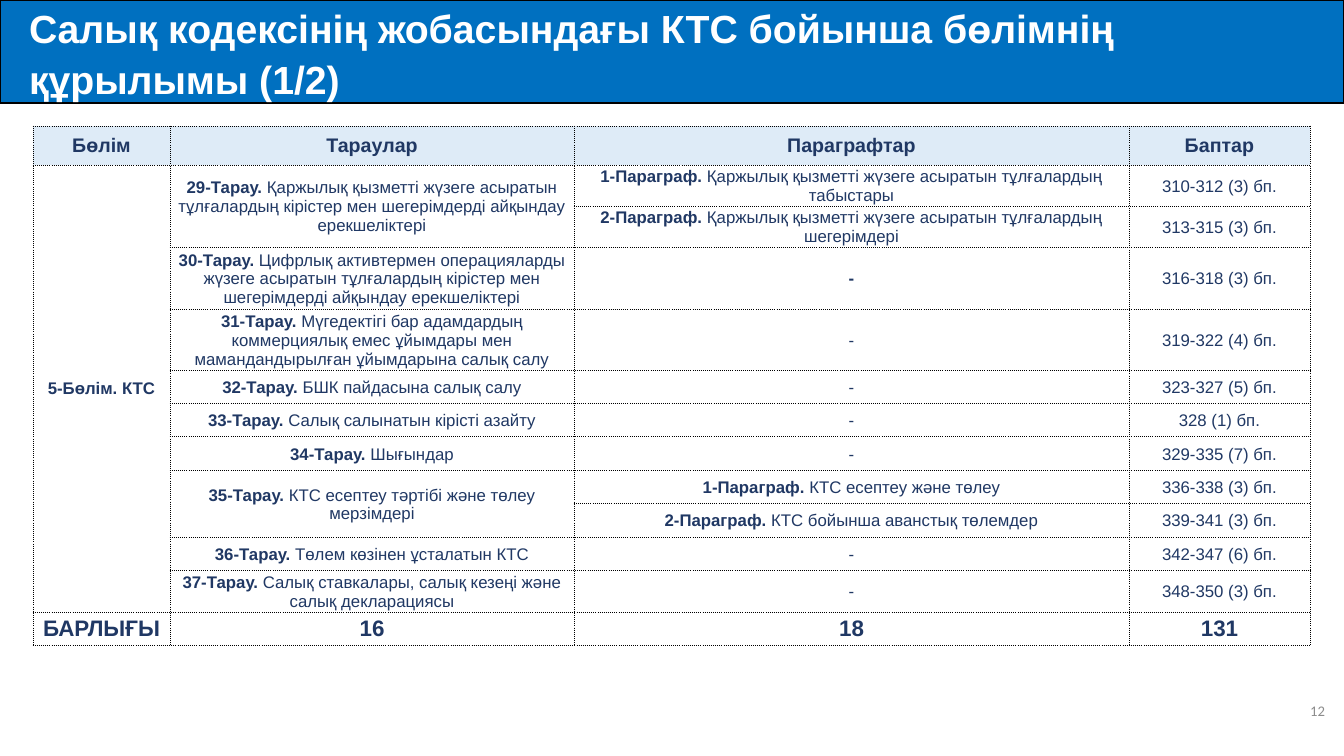
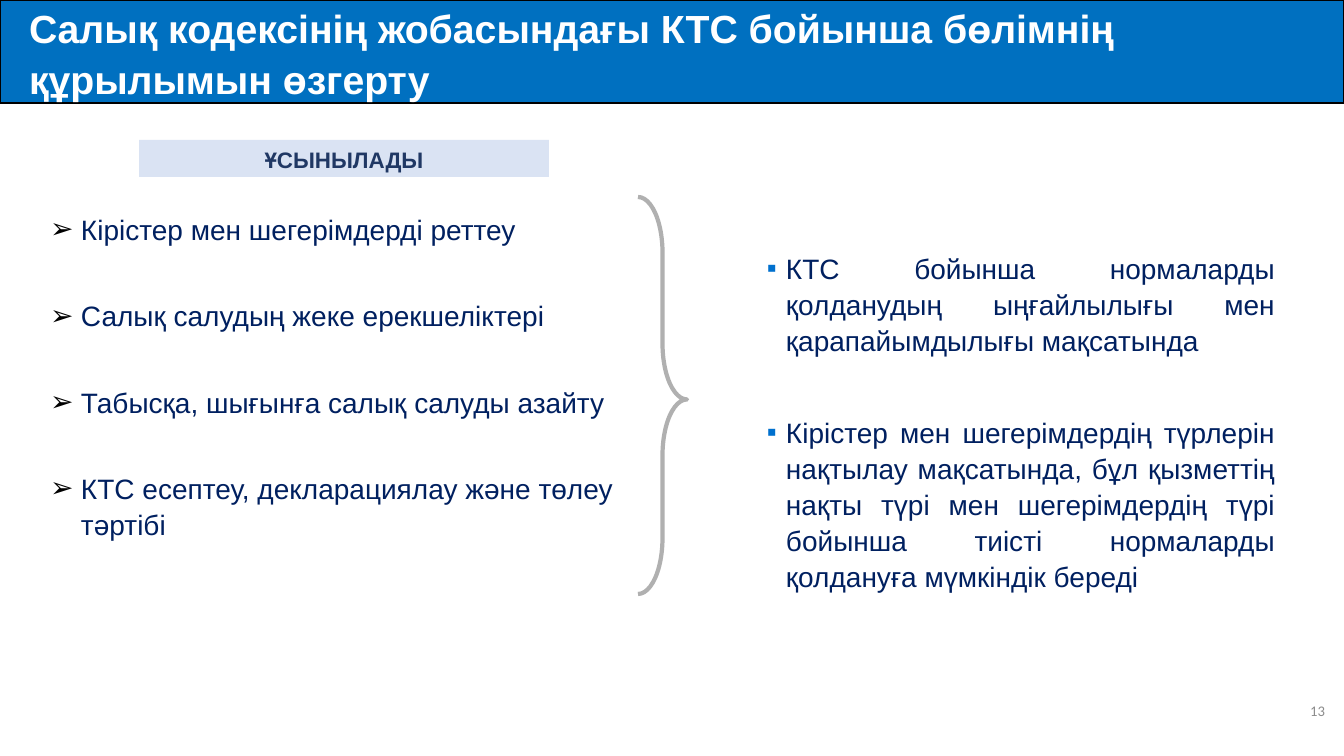
"""Build two slides on the structure of the tax code section."""
from lxml import etree
from pptx import Presentation
from pptx.dml.color import RGBColor
from pptx.enum.shapes import MSO_SHAPE
from pptx.enum.text import MSO_ANCHOR, PP_ALIGN
from pptx.oxml import parse_xml
from pptx.oxml.ns import nsdecls, qn
from pptx.util import Pt

PX = 914400 / 100.8
RECT, BRACE = MSO_SHAPE.RECTANGLE, MSO_SHAPE.RIGHT_BRACE
MID, TOP = MSO_ANCHOR.MIDDLE, MSO_ANCHOR.TOP
LEFT, MIDDLE, RIGHT, JUST = PP_ALIGN.LEFT, PP_ALIGN.CENTER, PP_ALIGN.RIGHT, PP_ALIGN.JUSTIFY
HUE = {
    "band": "0070C0", "white": "FFFFFF", "black": "000000", "ink": "203864",
    "navy": "002060", "head": "DEEBF7", "chip": "DAE3F3", "mark": "0070CE",
    "grey": "8C8C8C", "brace": "7C7C7C",
}


def px(*sizes):
    """Turn pixel lengths into EMU."""
    return [round(size * PX) for size in sizes]


def put(frame, text, size=12, font="Arial", hue="ink", bold=False, align=MIDDLE,
        pad=(10, 5, 10, 5), anchor=MID, line=None, gap=0, mark=None, tone="black", hang=0):
    """Write lines of text; a bar parts a bold lead from a plain rest."""
    frame.word_wrap = True
    frame.vertical_anchor = anchor
    (frame.margin_left, frame.margin_top,
     frame.margin_right, frame.margin_bottom) = px(*pad)
    for row, words in enumerate(text.split("\n")):
        para = frame.add_paragraph() if row else frame.paragraphs[0]
        if mark:
            props = para._p.get_or_add_pPr()
            indent, = px(hang)
            props.set("marL", str(indent))
            props.set("indent", str(-indent))
            tint = etree.SubElement(props, qn("a:buClr"))
            etree.SubElement(tint, qn("a:srgbClr"), val=HUE[tone])
            etree.SubElement(props, qn("a:buFont"), typeface="Arial")
            etree.SubElement(props, qn("a:buChar"), char=mark)
        para.alignment = align
        if line:
            para.line_spacing = line
        if row:
            para.space_before = Pt(gap)
        lead, bar, rest = words.partition("|")
        for part, heavy in ((lead, bold or bool(bar)), (rest, False)):
            if part:
                run = para.add_run()
                run.text = part
                run.font.size = Pt(size)
                run.font.name = font
                run.font.bold = heavy
                run.font.color.rgb = RGBColor.from_string(HUE[hue])


deck = Presentation()
deck.slide_width, deck.slide_height = px(1344, 756)

TITLES = [
    "Салық кодексінің жобасындағы КТС бойынша бөлімнің құрылымы (1/2)",
    "Салық кодексінің жобасындағы КТС бойынша бөлімнің құрылымын өзгерту",
]
slides = []
for page, title in enumerate(TITLES, 12):
    slide = deck.slides.add_slide(deck.slide_layouts[6])
    band = slide.shapes.add_shape(RECT, *px(0, 0, 1344, 103))
    band.shadow.inherit = False
    band.fill.solid()
    band.fill.fore_color.rgb = RGBColor.from_string(HUE["band"])
    band.line.color.rgb = RGBColor.from_string(HUE["black"])
    band.line.width = Pt(1)
    put(band.text_frame, title, size=28, hue="white", bold=True, align=LEFT,
        pad=(29, 5, 10, 5), line=1.07)
    foot = slide.shapes.add_textbox(*px(1209, 674, 126, 74))
    put(foot.text_frame, str(page), size=10.5, font="Calibri", hue="grey", align=RIGHT)
    slides.append(slide)
first, second = slides

ROWS = [
    ["Бөлім", "Тараулар", "Параграфтар", "Баптар"],
    ["5-Бөлім. КТС",
     "29-Тарау. |Қаржылық қызметті жүзеге асыратын тұлғалардың кірістер мен "
     "шегерімдерді айқындау ерекшеліктері",
     "1-Параграф. |Қаржылық қызметті жүзеге асыратын тұлғалардың табыстары",
     "310-312 (3) бп."],
    ["", "", "2-Параграф. |Қаржылық қызметті жүзеге асыратын тұлғалардың шегерімдері",
     "313-315 (3) бп."],
    ["", "30-Тарау. |Цифрлық активтермен операцияларды жүзеге асыратын тұлғалардың "
     "кірістер мен шегерімдерді айқындау ерекшеліктері", "-|", "316-318 (3) бп."],
    ["", "31-Тарау. |Мүгедектігі бар адамдардың коммерциялық емес ұйымдары мен "
     "мамандандырылған ұйымдарына салық салу", "-", "319-322 (4) бп."],
    ["", "32-Тарау. |БШК пайдасына салық салу", "-", "323-327 (5) бп."],
    ["", "33-Тарау. |Салық салынатын кірісті азайту", "-", "328 (1) бп."],
    ["", "34-Тарау. |Шығындар", "-", "329-335 (7) бп."],
    ["", "35-Тарау. |КТС есептеу тәртібі және төлеу мерзімдері",
     "1-Параграф. |КТС есептеу және төлеу", "336-338 (3) бп."],
    ["", "", "2-Параграф. |КТС бойынша аванстық төлемдер", "339-341 (3) бп."],
    ["", "36-Тарау. |Төлем көзінен ұсталатын КТС", "-", "342-347 (6) бп."],
    ["", "37-Тарау. |Салық ставкалары, салық кезеңі және салық декларациясы", "-",
     "348-350 (3) бп."],
    ["БАРЛЫҒЫ", "16", "18", "131"],
]
WIDE = [137, 404, 555, 181]
HIGH = [39, 39, 39, 57, 58, 33, 33, 34, 33, 34, 33, 39, 33]
SPANS = [(1, 0, 11), (1, 1, 2), (8, 1, 2)]
LAST = len(ROWS) - 1

grid = first.shapes.add_table(len(ROWS), len(WIDE), *px(33, 126, sum(WIDE), sum(HIGH))).table
for col, width in zip(grid.columns, px(*WIDE)):
    col.width = width
for row, height in zip(grid.rows, px(*HIGH)):
    row.height = height
for top, left, count in SPANS:
    grid.cell(top, left).merge(grid.cell(top + count - 1, left))
for r, row in enumerate(ROWS):
    for c, text in enumerate(row):
        cell = grid.cell(r, c)
        props = cell._tc.get_or_add_tcPr()
        for side in ("lnL", "lnR", "lnT", "lnB"):
            props.append(parse_xml(
                f'<a:{side} {nsdecls("a")} w="6350"><a:solidFill>'
                f'<a:srgbClr val="{HUE["black"]}"/></a:solidFill>'
                f'<a:prstDash val="sysDot"/></a:{side}>'))
        cell.fill.solid()
        cell.fill.fore_color.rgb = RGBColor.from_string(HUE["white" if r else "head"])
        cell.vertical_anchor = MID
        cell.margin_left, cell.margin_top, cell.margin_right, cell.margin_bottom = px(1, 1, 1, 0)
        size = {0: 14, LAST: 16}.get(r, 12)
        put(cell.text_frame, text, size=size, bold=r in (0, LAST) or c == 0,
            pad=(1, 1, 1, 0), anchor=None)

GOALS = """Кірістер мен шегерімдерді реттеу
Салық салудың жеке ерекшеліктері
Табысқа, шығынға салық салуды азайту
КТС есептеу, декларациялау және төлеу тәртібі"""
GAINS = """КТС бойынша нормаларды қолданудың ыңғайлылығы мен қарапайымдылығы мақсатында
Кірістер мен шегерімдердің түрлерін нақтылау мақсатында, бұл қызметтің нақты түрі мен \
шегерімдердің түрі бойынша тиісті нормаларды қолдануға мүмкіндік береді"""
LISTS = [
    ((40, 205, 607, 333), GOALS, dict(mark="➢", hang=31, gap=36, align=LEFT)),
    ((757, 244, 528, 338), GAINS, dict(mark="▪", tone="mark", hang=19, gap=40, align=JUST)),
]
for place, text, style in LISTS:
    box = second.shapes.add_textbox(*px(*place))
    put(box.text_frame, text, size=20, hue="navy", anchor=TOP, line=1.07, **style)

brace = second.shapes.add_shape(BRACE, *px(638, 197, 49, 397))
brace.shadow.inherit = False
brace.adjustments[0], brace.adjustments[1] = 1.14, 0.51
brace.fill.background()
brace.line.color.rgb = RGBColor.from_string(HUE["brace"])
brace.line.width = Pt(3)
shade = brace.line._ln.find(".//" + qn("a:srgbClr"))
etree.SubElement(shade, qn("a:alpha"), val="60000")

chip = second.shapes.add_shape(RECT, *px(139, 140, 410, 37))
chip.shadow.inherit = False
chip.fill.solid()
chip.fill.fore_color.rgb = RGBColor.from_string(HUE["chip"])
chip.line.fill.background()
put(chip.text_frame, "ҰСЫНЫЛАДЫ", size=16, bold=True, line=1.07)

deck.save("out.pptx")
